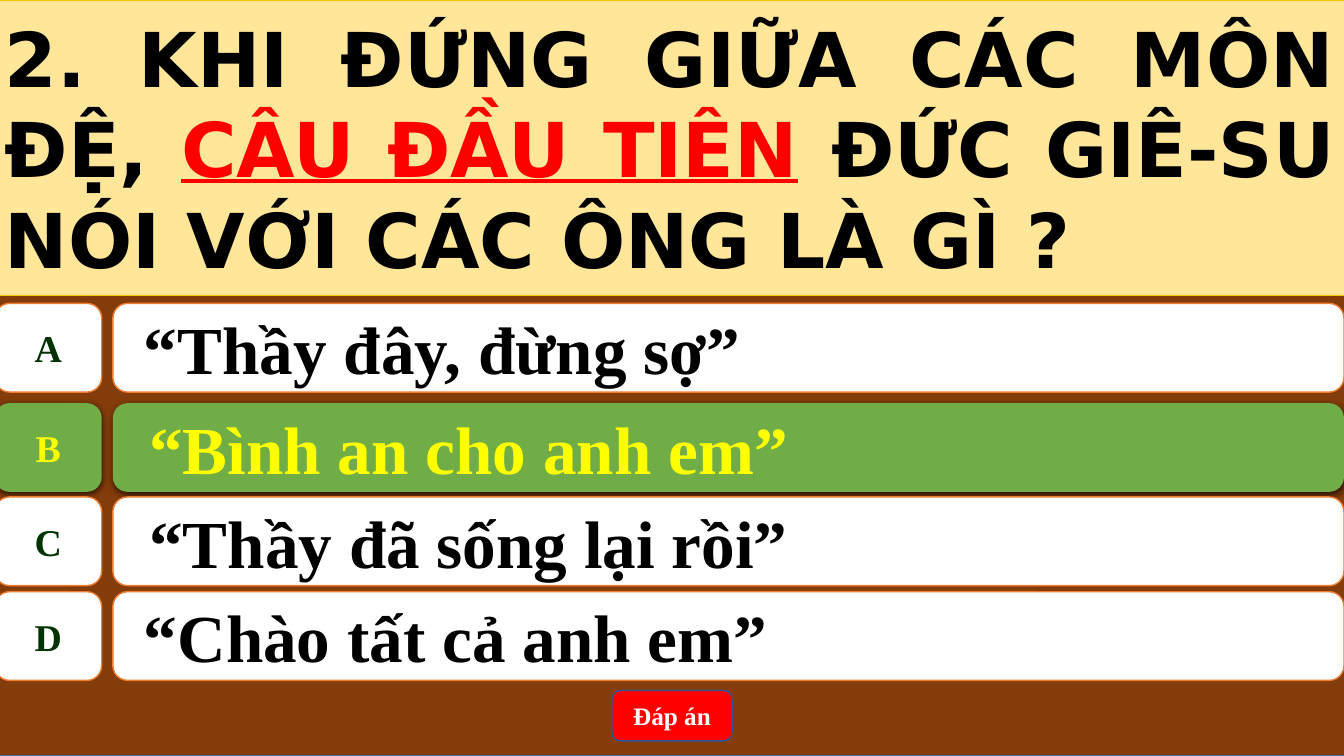
"""Build a quiz slide with one question and four lettered answers."""
from lxml.etree import SubElement
from pptx import Presentation
from pptx.dml.color import RGBColor
from pptx.enum.shapes import MSO_SHAPE
from pptx.enum.text import MSO_ANCHOR, PP_ALIGN
from pptx.oxml.ns import qn
from pptx.util import Inches, Pt

BROWN = RGBColor(0x84, 0x3C, 0x0B)
STEEL = RGBColor(0x43, 0x73, 0x9E)
NAVY = RGBColor(0x32, 0x54, 0x91)
CREAM = RGBColor(0xFF, 0xE6, 0x99)
GOLD = RGBColor(0xFF, 0xC0, 0x00)
ORANGE = RGBColor(0xED, 0x7D, 0x31)
GREEN = RGBColor(0x70, 0xAD, 0x47)
DARK_GREEN = RGBColor(0x00, 0x33, 0x00)
YELLOW = RGBColor(0xFF, 0xFF, 0x00)
RED = RGBColor(0xFF, 0x00, 0x00)
WHITE = RGBColor(0xFF, 0xFF, 0xFF)
BLACK = RGBColor(0x00, 0x00, 0x00)

LEFT, FULL = -0.38, 100.45
LABEL_WIDTH, ANSWER_LEFT, ANSWER_WIDTH = 7.95, 8.4, 91.6
ROW_HEIGHT = 11.73

ANSWERS = [
    ("A", " “Thầy đây, đừng sợ”", 40.13, False),
    ("B", "“Bình an cho anh em”", 53.33, True),
    ("C", "“Thầy đã sống lại rồi”", 65.73, True),
    ("D", " “Chào tất cả anh em”", 78.27, False),
]
CORRECT = "B"


class QuizSlide:
    """Draw quiz elements, with positions in percent of the slide's size."""

    body_font = "Times New Roman"
    title_font = "DejaVu Sans"

    def __init__(self, prs):
        self.width, self.height = prs.slide_width, prs.slide_height
        self.slide = prs.slides.add_slide(prs.slide_layouts[6])

    def box(self, kind, x, y, w, h, fill, line=None, line_width=1):
        sp = self.slide.shapes.add_shape(
            kind, int(self.width * x / 100), int(self.height * y / 100),
            int(self.width * w / 100), int(self.height * h / 100))
        sp.shadow.inherit = False
        sp.fill.solid()
        sp.fill.fore_color.rgb = fill
        if line is None:
            sp.line.fill.background()
        else:
            sp.line.color.rgb = line
            sp.line.width = Pt(line_width)
        return sp

    def shadow(self, sp):
        effects = sp._element.spPr.find(qn("a:effectLst"))
        outer = SubElement(effects, qn("a:outerShdw"), blurRad=str(Pt(4.5)),
                           dist=str(Pt(1.5)), dir="5400000", rotWithShape="0")
        color = SubElement(outer, qn("a:srgbClr"), val="000000")
        SubElement(color, qn("a:alpha"), val="63000")

    def style(self, r, size, color, font):
        r.font.size = Pt(size)
        r.font.name = font
        r.font.bold = True
        r.font.color.rgb = color

    def text(self, sp, text, size, color, align, wrap=True):
        tf = sp.text_frame
        tf.word_wrap = wrap
        tf.vertical_anchor = MSO_ANCHOR.MIDDLE
        p = tf.paragraphs[0]
        p.text = text
        p.alignment = align
        self.style(p.runs[0], size, color, self.body_font)
        return p

    def question(self, parts):
        sp = self.box(MSO_SHAPE.RECTANGLE, LEFT, 0, FULL, 39.07, CREAM, GOLD, 0.5)
        tf = sp.text_frame
        tf.word_wrap = True
        tf.vertical_anchor = MSO_ANCHOR.MIDDLE
        p = tf.paragraphs[0]
        p.alignment = PP_ALIGN.JUSTIFY
        for text, color, underline in parts:
            r = p.add_run()
            r.text = text
            self.style(r, 54, color, self.title_font)
            r.font.underline = underline

    def answer(self, letter, text, y, indented, correct):
        fill, line = (GREEN, None) if correct else (WHITE, ORANGE)
        label = self.box(MSO_SHAPE.FLOWCHART_ALTERNATE_PROCESS, LEFT, y,
                         LABEL_WIDTH, ROW_HEIGHT, fill, line)
        bar = self.box(MSO_SHAPE.ROUNDED_RECTANGLE, ANSWER_LEFT, y,
                       ANSWER_WIDTH, ROW_HEIGHT, fill, line)
        self.text(label, letter, 27, YELLOW if correct else DARK_GREEN,
                  PP_ALIGN.CENTER, wrap=False)
        p = self.text(bar, text, 48, YELLOW if correct else BLACK, PP_ALIGN.LEFT)
        if indented:
            p.level = 1
            pPr = p._p.get_or_add_pPr()
            pPr.set("marL", str(Inches(0.5)))
            pPr.set("indent", str(Inches(-0.28)))
        if correct:
            self.shadow(label)
            self.shadow(bar)

    def button(self, text):
        sp = self.box(MSO_SHAPE.ROUNDED_RECTANGLE, 45.54, 91.33, 8.93, 6.67, RED, NAVY)
        self.text(sp, text, 18, WHITE, PP_ALIGN.CENTER)


def main():
    prs = Presentation()
    prs.slide_width, prs.slide_height = Inches(13.33), Inches(7.5)
    quiz = QuizSlide(prs)
    quiz.box(MSO_SHAPE.RECTANGLE, LEFT, 0, FULL, 100, BROWN, STEEL)
    quiz.question([
        ("2. KHI ĐỨNG GIỮA CÁC MÔN ĐỆ, ", BLACK, False),
        ("CÂU ĐẦU TIÊN", RED, True),
        (" ĐỨC GIÊ-SU NÓI VỚI CÁC ÔNG LÀ GÌ ?", BLACK, False),
    ])
    for letter, text, y, indented in ANSWERS:
        quiz.answer(letter, text, y, indented, letter == CORRECT)
    quiz.button("Đáp án")
    prs.save("out.pptx")


if __name__ == "__main__":
    main()
